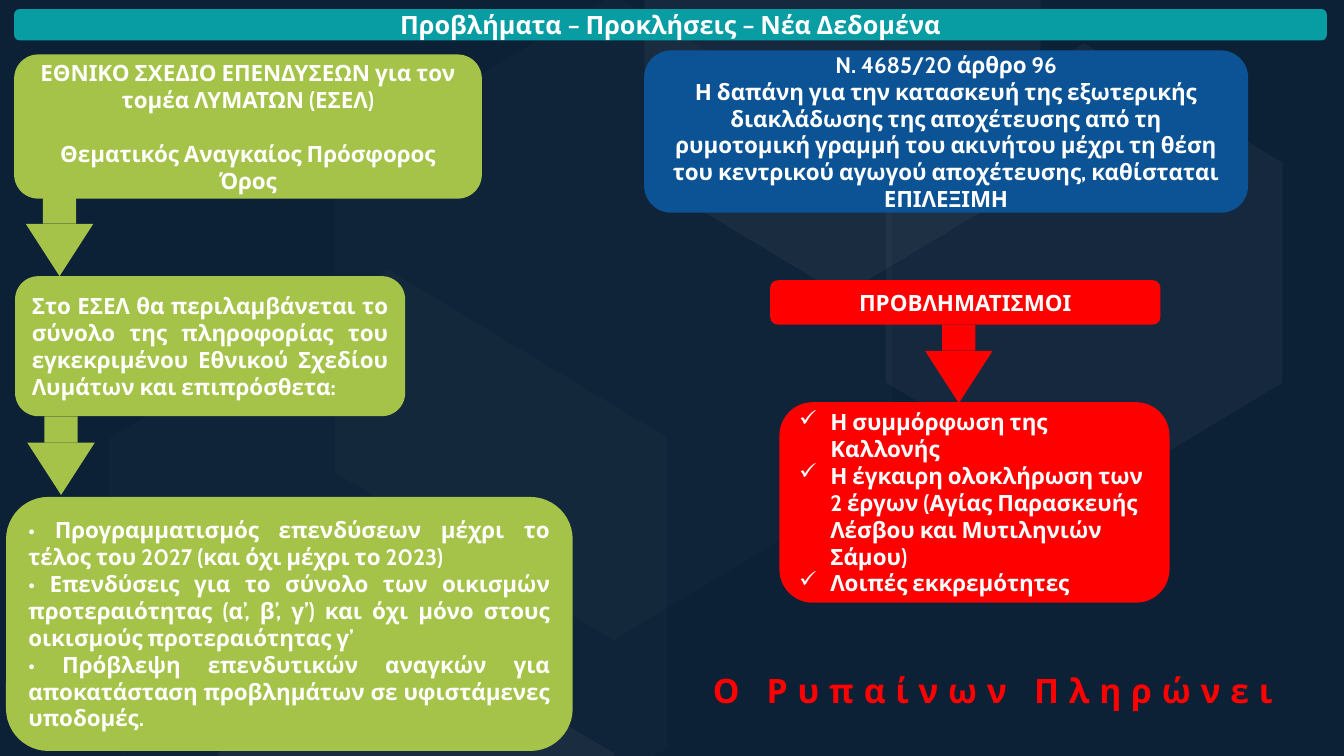
"""Slide on wastewater problems, challenges and new data; lengths are percentages of the slide."""
import pptx
import pptx.util
from lxml import etree
from pptx.dml.color import RGBColor
from pptx.enum.shapes import MSO_SHAPE
from pptx.enum.text import MSO_ANCHOR, PP_ALIGN
from pptx.oxml.ns import qn

WIDTH, HEIGHT = pptx.util.Inches(13.33), pptx.util.Inches(7.5)
FONT = "Cabin"
NAVY = RGBColor(0x0C, 0x20, 0x36)
TEAL = RGBColor(0x08, 0x9C, 0xA3)
GREEN = RGBColor(0xA5, 0xC2, 0x49)
BLUE = RGBColor(0x0B, 0x53, 0x94)
RED = RGBColor(0xFF, 0x00, 0x00)
WHITE = RGBColor(0xFF, 0xFF, 0xFF)

HEXAGON = [(0.5, 0), (1, 0.26), (1, 0.74), (0.5, 1), (0, 0.74), (0, 0.26)]
LARGE, SMALL = (41.48, 85.33), (29.48, 60.67)
STEM_W, STEM_H, HEAD_W, HEAD_H = 2.48, 3.47, 5.03, 6.93
CARD_W = 29.03


def across(share):
    """Turn a percentage of the slide's width into a length."""
    return round(WIDTH * share / 100)


def down(share):
    """Turn a percentage of the slide's height into a length."""
    return round(HEIGHT * share / 100)


def paint(sp, color):
    """Give a shape a plain fill, or none, without line or shadow."""
    sp.shadow.inherit = False
    sp.line.fill.background()
    if color is None:
        sp.fill.background()
    else:
        sp.fill.solid()
        sp.fill.fore_color.rgb = color


def add_preset(s, kind, x, y, w, h, color):
    """Add a painted preset shape."""
    sp = s.shapes.add_shape(kind, across(x), down(y), across(w), down(h))
    paint(sp, color)
    return sp


def add_hexagon(s, x, y, size, opacity):
    """Add a faint white background hexagon."""
    w, h = size
    points = [(across(x + w * px), down(y + h * py)) for px, py in HEXAGON]
    builder = s.shapes.build_freeform(*points[0])
    builder.add_line_segments(points[1:], close=True)
    sp = builder.convert_to_shape()
    paint(sp, WHITE)
    color = sp.fill._xPr.find(qn("a:solidFill"))[0]
    etree.SubElement(color, qn("a:alpha"), val=str(opacity * 1000))


def add_arrow(s, center, y, color):
    """Add a downward arrow made of a stem and a head."""
    add_preset(s, MSO_SHAPE.RECTANGLE, center - STEM_W / 2, y, STEM_W, STEM_H, color)
    head = add_preset(s, MSO_SHAPE.ISOSCELES_TRIANGLE, center - HEAD_W / 2, y + STEM_H,
                      HEAD_W, HEAD_H, color)
    head.rotation = 180


def add_card(s, x, y, w, h, fill, texts, align=PP_ALIGN.CENTER, size=16, color=WHITE, gap=0):
    """Add a rounded box with one paragraph per text and return its paragraphs."""
    sp = add_preset(s, MSO_SHAPE.ROUNDED_RECTANGLE, x, y, w, h, fill)
    tf = sp.text_frame
    tf.word_wrap = True
    tf.vertical_anchor = MSO_ANCHOR.MIDDLE
    for i, text in enumerate(texts):
        p = tf.add_paragraph() if i else tf.paragraphs[0]
        p.text = text
        p.alignment = align
        p.font.name, p.font.size, p.font.bold = FONT, pptx.util.Pt(size), True
        p.font.color.rgb = color
        if i and gap:
            p.space_before = pptx.util.Pt(gap)
    return tf.paragraphs


def add_check_mark(p):
    """Put a hanging check mark before a paragraph."""
    pPr = p._p.get_or_add_pPr()
    indent = pptx.util.Inches(0.31)
    pPr.set("marL", str(indent))
    pPr.set("indent", str(-indent))
    bullet = etree.Element(qn("a:buChar"), char="✓")
    pPr.insert_element_before(bullet, "a:tabLst", "a:defRPr", "a:extLst")


def main():
    """Build and save the slide."""
    prs = pptx.Presentation()
    prs.slide_width, prs.slide_height = WIDTH, HEIGHT
    s = prs.slides.add_slide(prs.slide_layouts[6])
    s.background.fill.solid()
    s.background.fill.fore_color.rgb = NAVY

    for x, y, size, opacity in [(24.9, -0.67, LARGE, 2), (65.94, 5.73, SMALL, 4),
                                (47.94, -21.6, SMALL, 4), (16.2, 83.87, SMALL, 4),
                                (8.18, 35.73, LARGE, 2)]:
        add_hexagon(s, x, y, size, opacity)

    add_card(s, 1.05, 1.2, 97.67, 4.13, TEAL, ["Προβλήματα – Προκλήσεις – Νέα Δεδομένα"], size=18)

    for center, y, color in [(4.43, 26.13, GREEN), (4.54, 55.07, GREEN), (71.34, 42.93, RED)]:
        add_arrow(s, center, y, color)

    add_card(s, 1.05, 7.2, 34.8, 19.07, GREEN, [
        "ΕΘΝΙΚΟ ΣΧΕΔΙΟ ΕΠΕΝΔΥΣΕΩΝ για τον τομέα ΛΥΜΑΤΩΝ (ΕΣΕΛ)",
        "Θεματικός Αναγκαίος Πρόσφορος Όρος"], gap=19.2)
    add_card(s, 1.12, 36.53, CARD_W, 18.53, GREEN, [
        "Στο ΕΣΕΛ θα περιλαμβάνεται το σύνολο της πληροφορίας του εγκεκριμένου "
        "Εθνικού Σχεδίου Λυμάτων και επιπρόσθετα:"], PP_ALIGN.JUSTIFY)
    add_card(s, 0.45, 65.73, 42.16, 33.6, GREEN, [
        "• Προγραμματισμός επενδύσεων μέχρι το τέλος του 2027 (και όχι μέχρι το 2023)",
        "• Επενδύσεις για το σύνολο των οικισμών προτεραιότητας (α’, β’, γ’) "
        "και όχι μόνο στους οικισμούς προτεραιότητας γ’",
        "• Πρόβλεψη επενδυτικών αναγκών για αποκατάσταση προβλημάτων "
        "σε υφιστάμενες υποδομές."], PP_ALIGN.JUSTIFY)
    add_card(s, 47.93, 6.67, 44.94, 21.47, BLUE, [
        "N. 4685/20 άρθρο 96",
        "Η δαπάνη για την κατασκευή της εξωτερικής διακλάδωσης της αποχέτευσης από τη "
        "ρυμοτομική γραμμή του ακινήτου μέχρι τη θέση του κεντρικού αγωγού αποχέτευσης, "
        "καθίσταται ΕΠΙΛΕΞΙΜΗ"])
    add_card(s, 57.31, 37.07, CARD_W, 5.87, RED, ["ΠΡΟΒΛΗΜΑΤΙΣΜΟΙ"])
    concerns = add_card(s, 57.99, 53.2, CARD_W, 26.53, RED, [
        "Η συμμόρφωση της Καλλονής",
        "Η έγκαιρη ολοκλήρωση των 2 έργων (Αγίας Παρασκευής Λέσβου και Μυτιληνιών Σάμου)",
        "Λοιπές εκκρεμότητες"], PP_ALIGN.LEFT)
    for p in concerns:
        add_check_mark(p)

    motto = add_card(s, 51.99, 85.6, 46.74, 11.47, None, ["Ο Ρυπαίνων Πληρώνει"],
                     PP_ALIGN.LEFT, size=24, color=RED)
    motto[0].runs[0]._r.get_or_add_rPr().set("spc", "700")

    prs.save("out.pptx")


if __name__ == "__main__":
    main()
